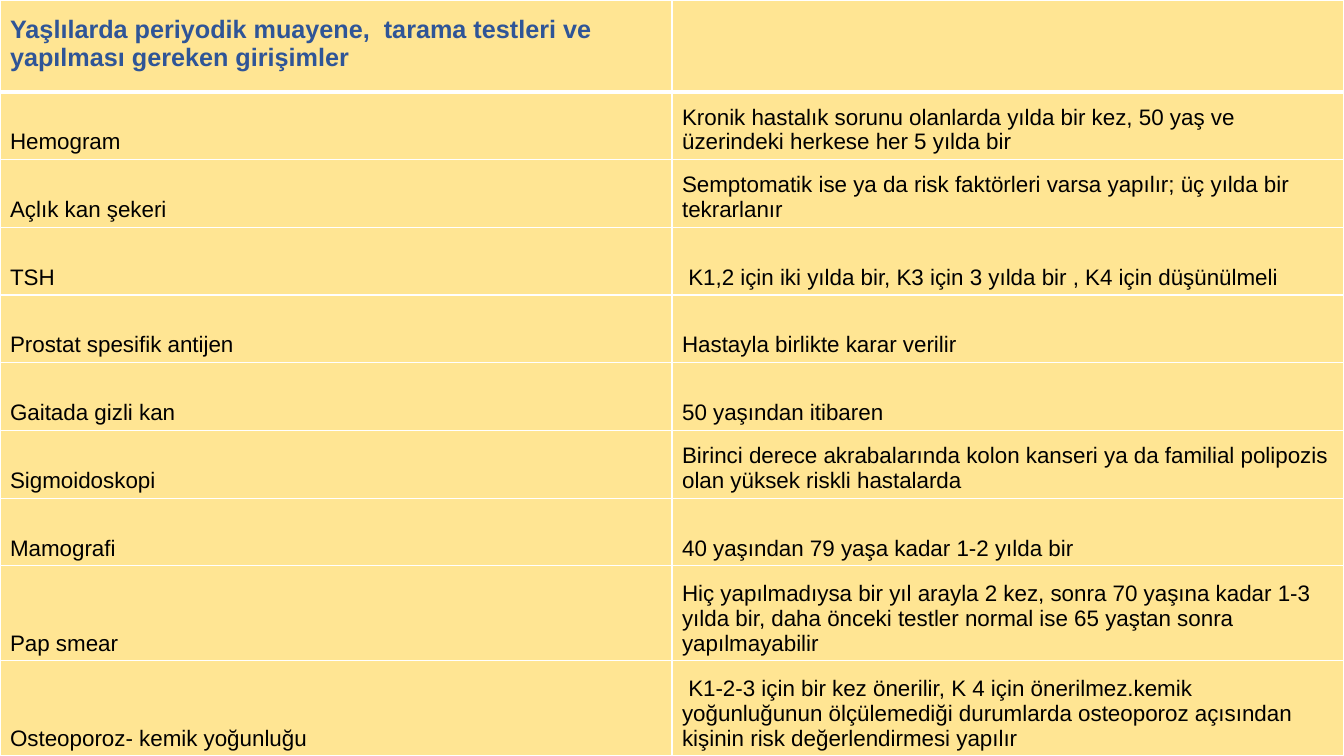
from lxml.etree import SubElement
from pptx import Presentation
from pptx.dml.color import RGBColor
from pptx.enum.text import MSO_VERTICAL_ANCHOR as Anchor
from pptx.oxml import parse_xml
from pptx.oxml.ns import nsdecls, qn
from pptx.util import Inches, Pt

HEADING = "Yaşlılarda periyodik muayene,  tarama testleri ve yapılması gereken girişimler"
SCREENINGS = [
    ("Hemogram",
     "Kronik hastalık sorunu olanlarda yılda bir kez, 50 yaş ve üzerindeki herkese her 5 yılda bir"),
    ("Açlık kan şekeri",
     "Semptomatik ise ya da risk faktörleri varsa yapılır; üç yılda bir tekrarlanır"),
    ("TSH", " K1,2 için iki yılda bir, K3 için 3 yılda bir , K4 için düşünülmeli"),
    ("Prostat spesifik antijen", "Hastayla birlikte karar verilir"),
    ("Gaitada gizli kan", "50 yaşından itibaren"),
    ("Sigmoidoskopi",
     "Birinci derece akrabalarında kolon kanseri ya da familial polipozis olan yüksek riskli hastalarda"),
    ("Mamografi", "40 yaşından 79 yaşa kadar 1-2 yılda bir"),
    ("Pap smear",
     "Hiç yapılmadıysa bir yıl arayla 2 kez, sonra 70 yaşına kadar 1-3 yılda bir, "
     "daha önceki testler normal ise 65 yaştan sonra yapılmayabilir"),
    ("Osteoporoz- kemik yoğunluğu",
     " K1-2-3 için bir kez önerilir, K 4 için önerilmez.kemik yoğunluğunun ölçülemediği "
     "durumlarda osteoporoz açısından kişinin risk değerlendirmesi yapılır"),
]
# Relative row heights: heading, seven short rows, two tall rows
ROW_WEIGHTS = [0.91] + [0.67] * 7 + [0.94] * 2


def rgb(hex_color):
    return RGBColor.from_string(hex_color)


class ScreeningSlide:
    FILL, RULE = "FFE593", "FFFFFF"
    HEADING_FONT = {"name": "Arial", "size": Pt(18), "bold": True}
    BODY_FONT = {"name": "Arial", "size": Pt(16), "bold": False}

    def __init__(self, deck):
        self.width, self.height = deck.slide_width, deck.slide_height
        self.slide = deck.slides.add_slide(deck.slide_layouts[6])

    def table(self, rows, weights):
        """Fill the slide with equal columns and weighted rows."""
        columns = len(rows[0])
        grid = self.slide.shapes.add_table(
            len(rows), columns, 0, 0, self.width, self.height).table
        grid.horz_banding = False
        for column in grid.columns:
            column.width = self.width // columns
        for row, weight in zip(grid.rows, weights):
            row.height = int(self.height * weight / sum(weights))
        for r, entries in enumerate(rows):
            for c, wording in enumerate(entries):
                self.cell(grid.cell(r, c), wording, r)

    def cell(self, cell, wording, row):
        is_heading = row == 0
        cell.text = wording
        cell.vertical_anchor = Anchor.BOTTOM
        cell.margin_bottom = Inches(0.2 if is_heading else 0.05)
        cell.fill.solid()
        cell.fill.fore_color.rgb = rgb(self.FILL)
        font = cell.text_frame.paragraphs[0].font
        runs = cell.text_frame.paragraphs[0].runs
        for target in [font] + [run.font for run in runs]:
            for attribute, value in (self.HEADING_FONT if is_heading else self.BODY_FONT).items():
                setattr(target, attribute, value)
            target.color.rgb = rgb("2F5597" if is_heading else "000000")
        self.borders(cell, top=3 if row == 1 else 1, bottom=3 if is_heading else 1)

    def borders(self, cell, top, bottom):
        properties = cell._tc.get_or_add_tcPr()
        sides = {"lnL": 1, "lnR": 1, "lnT": top, "lnB": bottom}
        for position, (side, points) in enumerate(sides.items()):
            line = parse_xml(f'<a:{side} {nsdecls("a")} w="{Pt(points)}"/>')
            fill = SubElement(line, qn("a:solidFill"))
            SubElement(fill, qn("a:srgbClr"), val=self.RULE)
            properties.insert(position, line)


def main():
    deck = Presentation()
    deck.slide_width, deck.slide_height = Inches(13.33), Inches(7.5)
    # Screening table with its heading row
    ScreeningSlide(deck).table([(HEADING, "")] + SCREENINGS, ROW_WEIGHTS)
    deck.save("out.pptx")


if __name__ == "__main__":
    main()
